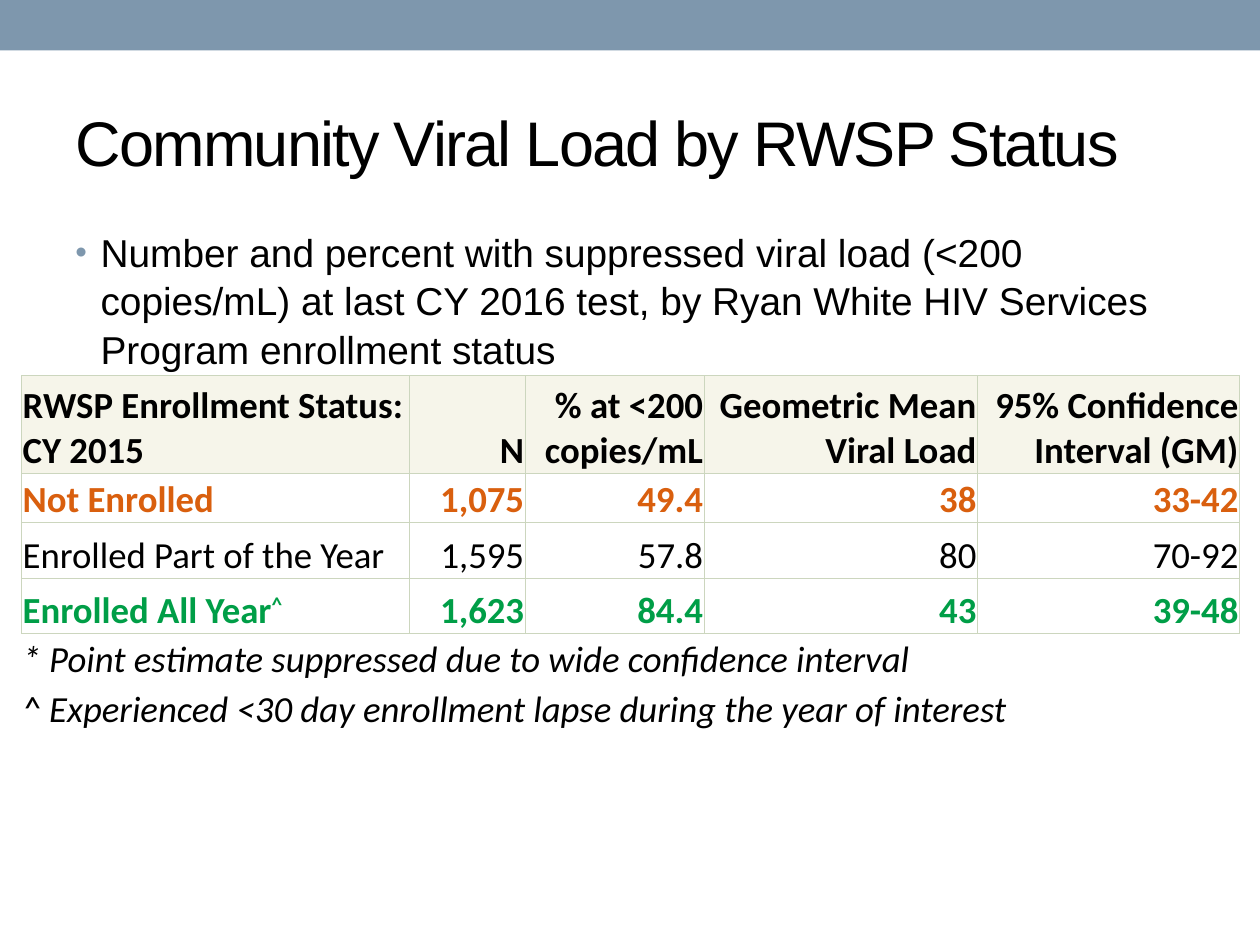
from lxml import etree
from pptx import Presentation
from pptx.dml.color import RGBColor
from pptx.enum.shapes import MSO_SHAPE
from pptx.enum.text import MSO_ANCHOR, PP_ALIGN
from pptx.oxml.ns import qn
from pptx.util import Inches, Pt

RECTANGLE = MSO_SHAPE.RECTANGLE
MIDDLE, TOP, BOTTOM = MSO_ANCHOR.MIDDLE, MSO_ANCHOR.TOP, MSO_ANCHOR.BOTTOM
LEFT, RIGHT = PP_ALIGN.LEFT, PP_ALIGN.RIGHT

BLACK = RGBColor(0x00, 0x00, 0x00)
SLATE = RGBColor(0x7E, 0x97, 0xAD)
CREAM = RGBColor(0xF6, 0xF5, 0xEA)
SAGE = RGBColor(0xCC, 0xD6, 0xBE)
ORANGE = RGBColor(0xD9, 0x5F, 0x0E)
GREEN = RGBColor(0x00, 0x9E, 0x47)


def add_span(para, text, size, font, color=BLACK, bold=False, italic=False):
    span = para.add_run()
    span.text = text
    span.font.size = Pt(size)
    span.font.name = font
    span.font.color.rgb = color
    span.font.bold = bold
    span.font.italic = italic
    return span


def set_borders(cell, visible_sides):
    properties = cell._tc.get_or_add_tcPr()
    for position, side in enumerate(("lnL", "lnR", "lnT", "lnB")):
        line = etree.Element(qn(f"a:{side}"), w=str(Pt(0.5)))
        if side in visible_sides:
            fill = etree.SubElement(line, qn("a:solidFill"))
            etree.SubElement(fill, qn("a:srgbClr"), val=str(SAGE))
        else:
            etree.SubElement(line, qn("a:noFill"))
        properties.insert(position, line)


deck = Presentation()
deck.slide_width = Inches(10)
deck.slide_height = Inches(7.5)
page = deck.slides.add_slide(deck.slide_layouts[6])

# Top band
band = page.shapes.add_shape(RECTANGLE, 0, 0, deck.slide_width, Inches(0.4))
band.shadow.inherit = False
band.fill.solid()
band.fill.fore_color.rgb = SLATE
band.line.fill.background()

# Title
title = page.shapes.add_textbox(Inches(0.5), Inches(0.58), Inches(9.33), Inches(1.08))
title.text_frame.word_wrap = True
title.text_frame.vertical_anchor = MIDDLE
span = add_span(title.text_frame.paragraphs[0], "Community Viral Load by RWSP Status", 36, "Arial")
span.font._element.set("spc", "-100")

# Bulleted introduction
intro = page.shapes.add_textbox(Inches(0.5), Inches(1.75), Inches(9), Inches(1.17))
intro.text_frame.word_wrap = True
intro.text_frame.vertical_anchor = TOP
para = intro.text_frame.paragraphs[0]
para.space_before = para.space_after = Pt(3)
para.line_spacing = 1.04
add_span(
    para,
    "Number and percent with suppressed viral load (<200 copies/mL) at last CY 2016 test, "
    "by Ryan White HIV Services Program enrollment status",
    22.2,
    "Arial",
)
bullet = para._p.get_or_add_pPr()
bullet.set("marL", str(Inches(0.2)))
bullet.set("indent", str(Inches(-0.2)))
bullet_color = etree.SubElement(bullet, qn("a:buClr"))
etree.SubElement(bullet_color, qn("a:srgbClr"), val=str(SLATE))
etree.SubElement(bullet, qn("a:buSzPct"), val="85000")
etree.SubElement(bullet, qn("a:buFont"), typeface="Arial")
etree.SubElement(bullet, qn("a:buChar"), char="•")

# Table: each row has its texts, colour and weight
data_rows = [
    (["RWSP Enrollment Status: CY 2015", "N", "% at <200 copies/mL",
      "Geometric Mean Viral Load", "95% Confidence Interval (GM)"], BLACK, True),
    (["Not Enrolled", "1,075", "49.4", "38", "33-42"], ORANGE, True),
    (["Enrolled Part of the Year", "1,595", "57.8", "80", "70-92"], BLACK, False),
    (["Enrolled All Year", "1,623", "84.4", "43", "39-48"], GREEN, True),
]
footnotes = [
    "* Point estimate suppressed due to wide confidence interval",
    "^ Experienced <30 day enrollment lapse during the year of interest",
]
column_widths = [3.08, 0.92, 1.42, 2.17, 2.08]
row_heights = [0.78, 0.39, 0.44, 0.44, 0.39, 0.39]

table = page.shapes.add_table(
    len(row_heights), len(column_widths),
    Inches(0.17), Inches(2.98), Inches(sum(column_widths)), Inches(sum(row_heights)),
).table
table.first_row = False
table.horz_banding = False
for column, width in zip(table.columns, column_widths):
    column.width = Inches(width)
for row, height in zip(table.rows, row_heights):
    row.height = Inches(height)

# Shared cell format
for row_index, row in enumerate(table.rows):
    for cell in row.cells:
        cell.vertical_anchor = BOTTOM
        cell.margin_left = cell.margin_right = cell.margin_top = Inches(0.01)
        cell.margin_bottom = 0
        if row_index == 0:
            cell.fill.solid()
            cell.fill.fore_color.rgb = CREAM
        else:
            cell.fill.background()
        if row_index < len(data_rows):
            set_borders(cell, ("lnL", "lnR", "lnT", "lnB"))
        elif row_index == len(data_rows):
            set_borders(cell, ("lnT",))
        else:
            set_borders(cell, ())

# Header and data texts
for row_index, (texts, color, bold) in enumerate(data_rows):
    for column_index, text in enumerate(texts):
        para = table.cell(row_index, column_index).text_frame.paragraphs[0]
        para.alignment = RIGHT if column_index else LEFT
        add_span(para, text, 21, "Calibri", color, bold)

# Footnote mark on the last data row
para = table.cell(len(data_rows) - 1, 0).text_frame.paragraphs[0]
mark = add_span(para, "^", 21, "Calibri", GREEN, True)
mark.font._element.set("baseline", "30000")

# Footnotes across the full width
for row_index, note in enumerate(footnotes, start=len(data_rows)):
    cell = table.cell(row_index, 0)
    cell.merge(table.cell(row_index, len(column_widths) - 1))
    add_span(cell.text_frame.paragraphs[0], note, 21, "Calibri", italic=True)

deck.save("out.pptx")
